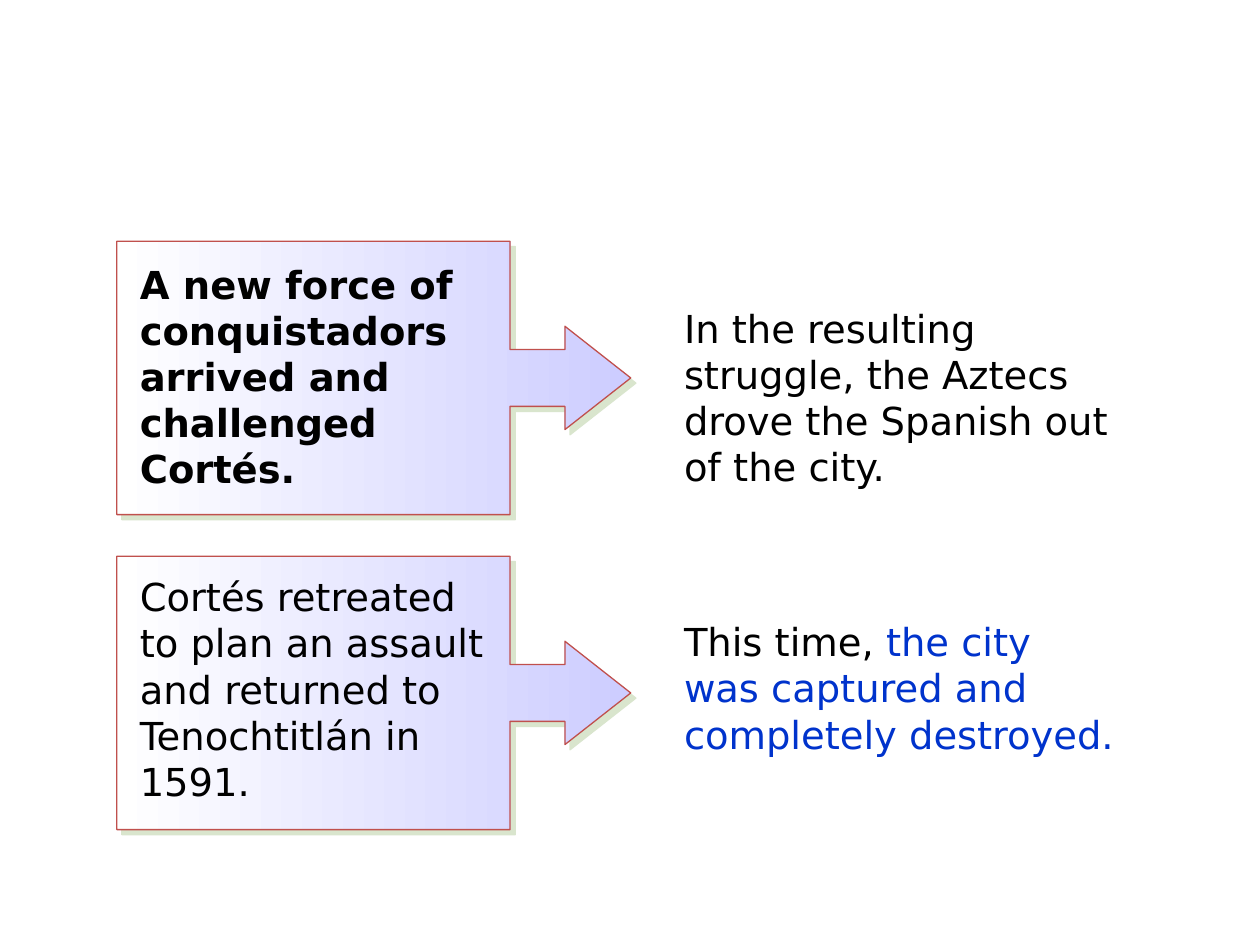
from dataclasses import dataclass

from lxml import etree
from pptx import Presentation
from pptx.dml.color import RGBColor
from pptx.enum.shapes import MSO_SHAPE as Shape
from pptx.enum.text import MSO_AUTO_SIZE as AutoSize
from pptx.oxml.ns import qn
from pptx.util import Cm, Pt

BLACK, BLUE = "000000", "0033CC"
ADJUSTMENTS = (0.208, 0.189, 0.241, 0.765)
CALLOUT_LEFT, CALLOUT_W, CALLOUT_H = 4.78, 5.51, 10.36
CAUSE_LEFT, CAUSE_W, CAUSE_H = 2.57, 7.59, 5.54
EFFECT_LEFT, EFFECT_W = 13.54, 9.53


@dataclass
class Span:
    text: str
    color: str = BLACK
    bold: bool = False


@dataclass
class Step:
    """A cause in a callout and its effect; lengths in cm."""
    callout_top: float
    cause_top: float
    cause: Span
    effect_top: float
    effect_height: float
    effect: list[Span]


STEPS = [
    Step(2.44, 5.13,
         Span("A new force of conquistadors arrived and challenged Cortés.", bold=True),
         6.02, 4.6,
         [Span("In the resulting struggle, the Aztecs drove the Spanish out of the city.")]),
    Step(8.79, 11.43,
         Span("Cortés retreated to plan an assault and returned to Tenochtitlán in 1591."),
         12.34, 3.66,
         [Span("This time, "),
          Span("the city \nwas captured and \ncompletely destroyed.", BLUE)]),
]


def rgb(value: str) -> RGBColor:
    return RGBColor.from_string(value)


def add_shadow(sp) -> None:
    sp.shadow.inherit = False
    effects = sp._element.spPr.find(qn("a:effectLst"))
    shadow = etree.SubElement(effects, qn("a:outerShdw"), dist="53340",
                              dir="2700000", algn="ctr", rotWithShape="0")
    color = etree.SubElement(shadow, qn("a:srgbClr"), val="ADC793")
    etree.SubElement(color, qn("a:alpha"), val="46000")


def add_callout(slide, top: float) -> None:
    """Draw an up-arrow callout turned to point right."""
    sp = slide.shapes.add_shape(Shape.UP_ARROW_CALLOUT, Cm(CALLOUT_LEFT), Cm(top),
                                Cm(CALLOUT_W), Cm(CALLOUT_H))
    sp.rotation = 90
    for i, value in enumerate(ADJUSTMENTS):
        sp.adjustments[i] = value
    sp.fill.gradient()
    sp.fill.gradient_angle = 270
    for stop, color, position in zip(sp.fill.gradient_stops, ("CDCDFF", "FFFFFF"), (0, 1)):
        stop.color.rgb = rgb(color)
        stop.position = position
    sp.line.color.rgb = rgb("C0504D")
    sp.line.width = Pt(0.75)
    add_shadow(sp)


def add_text(slide, left: float, top: float, width: float, height: float,
             spans: list[Span]) -> None:
    tf = slide.shapes.add_textbox(Cm(left), Cm(top), Cm(width), Cm(height)).text_frame
    tf.word_wrap = True
    tf.auto_size = AutoSize.SHAPE_TO_FIT_TEXT
    p = tf.paragraphs[0]
    p.space_after = Pt(13)
    for span in spans:
        for i, line in enumerate(span.text.split("\n")):
            if i:
                p.add_line_break()
            r = p.add_run()
            r.text = line
            r.font.name = "DejaVu Sans"
            r.font.size = Pt(22)
            r.font.bold = span.bold
            r.font.color.rgb = rgb(span.color)


def main() -> None:
    prs = Presentation()
    prs.slide_width, prs.slide_height = Cm(25.4), Cm(19.05)
    slide = prs.slides.add_slide(prs.slide_layouts[6])
    for step in STEPS:
        add_callout(slide, step.callout_top)
        add_text(slide, CAUSE_LEFT, step.cause_top, CAUSE_W, CAUSE_H, [step.cause])
        add_text(slide, EFFECT_LEFT, step.effect_top, EFFECT_W, step.effect_height,
                 step.effect)
    prs.save("out.pptx")


if __name__ == "__main__":
    main()
